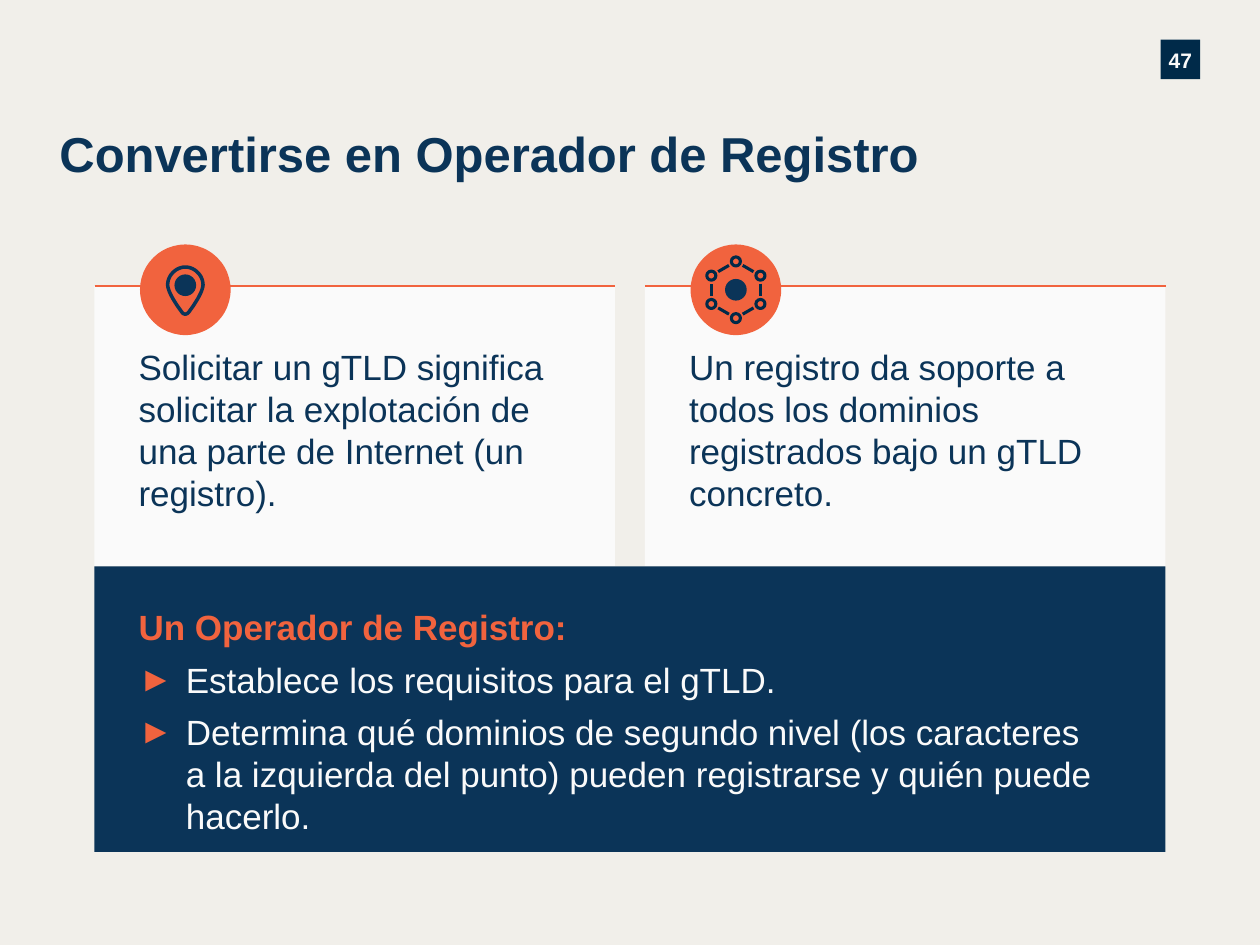
"""Build the slide on becoming a registry operator."""
import math
from dataclasses import dataclass

from lxml import etree
from pptx import Presentation
from pptx.dml.color import RGBColor
from pptx.enum.shapes import MSO_CONNECTOR, MSO_SHAPE
from pptx.enum.text import MSO_ANCHOR, PP_ALIGN
from pptx.oxml.ns import qn
from pptx.util import Pt

RECTANGLE, OVAL = MSO_SHAPE.RECTANGLE, MSO_SHAPE.OVAL
STRAIGHT = MSO_CONNECTOR.STRAIGHT
TOP, MIDDLE = MSO_ANCHOR.TOP, MSO_ANCHOR.MIDDLE
LEFT, CENTER = PP_ALIGN.LEFT, PP_ALIGN.CENTER

FONT = "Arial"
SAND, WHITE, ORANGE = "F1EFEA", "FAFAFA", "F1633E"
NAVY, DARK_NAVY = "0B3458", "002A49"

MARGIN, CONTENT_WIDTH = 54, 612
CARD_TOP, CARD_WIDTH, CARD_HEIGHT = 163.4, 297.4, 160
CARD_INSETS = (25.2, 33.8, 28.1, 21.6)
PANEL_INSETS = (25.2, 22.3, 33.8, 21.6)
BADGE_SIZE, BADGE_X, BADGE_Y = 51.8, 51.9, 165.6
DOT_SIZE = 12.4
BULLET_INDENT = 27

PIN_START = (1.8, 13)
PIN_CURVES = (
    ((0.7, 14.2), (-0.9, 14.2), (-1.8, 13)),
    ((-4.5, 9.4), (-10.1, 1.4), (-10.1, -2.9)),
    ((-10.1, -8.2), (-5.3, -13), (0, -13)),
    ((5.3, -13), (10.1, -8.2), (10.1, -2.9)),
    ((10.1, 1.4), (4.5, 9.4), PIN_START),
)
CURVE_STEPS = 12


@dataclass(frozen=True)
class Box:
    """A rectangle in points."""
    left: float
    top: float
    width: float
    height: float

    def lengths(self) -> tuple:
        """Return the four lengths for python-pptx."""
        return Pt(self.left), Pt(self.top), Pt(self.width), Pt(self.height)


@dataclass(frozen=True)
class Line:
    """One paragraph and its look."""
    text: str
    size: float = 20
    color: str = NAVY
    bold: bool = False
    bullet: bool = False
    align: PP_ALIGN = LEFT


def rgb(color: str) -> RGBColor:
    """Turn a hex string into a colour."""
    return RGBColor.from_string(color)


def add_bullet(para) -> None:
    """Give a paragraph a hanging orange arrow."""
    para.space_before = Pt(6)
    properties = para._p.get_or_add_pPr()
    properties.set("marL", str(Pt(BULLET_INDENT)))
    properties.set("indent", str(-Pt(BULLET_INDENT)))
    bullet_color = etree.SubElement(properties, qn("a:buClr"))
    etree.SubElement(bullet_color, qn("a:srgbClr"), val=ORANGE)
    etree.SubElement(properties, qn("a:buFont"), typeface=FONT)
    etree.SubElement(properties, qn("a:buChar"), char="►")


def write(shape, lines: list[Line], insets: tuple = (0, 0, 0, 0), anchor: MSO_ANCHOR = TOP) -> None:
    """Fill a shape with formatted paragraphs."""
    frame = shape.text_frame
    frame.word_wrap = True
    frame.vertical_anchor = anchor
    frame.margin_left, frame.margin_top, frame.margin_right, frame.margin_bottom = map(Pt, insets)
    frame.text = "\n".join(line.text for line in lines)
    for para, line in zip(frame.paragraphs, lines):
        para.alignment = line.align
        if line.bullet:
            add_bullet(para)
        for span in para.runs:
            span.font.name = FONT
            span.font.size = Pt(line.size)
            span.font.bold = line.bold
            span.font.color.rgb = rgb(line.color)


def paint(shape, fill: str | None, outline: str | None = None, weight: float = 0) -> None:
    """Set the fill and outline of a shape and drop its shadow."""
    shape.shadow.inherit = False
    if fill:
        shape.fill.solid()
        shape.fill.fore_color.rgb = rgb(fill)
    else:
        shape.fill.background()
    if outline:
        shape.line.color.rgb = rgb(outline)
        shape.line.width = Pt(weight)
    else:
        shape.line.fill.background()


def add_panel(shapes, box: Box, fill: str):
    """Add a filled rectangle without outline."""
    panel = shapes.add_shape(RECTANGLE, *box.lengths())
    paint(panel, fill)
    return panel


def add_circle(shapes, x: float, y: float, size: float, fill: str | None,
               outline: str | None = None, weight: float = 0) -> None:
    """Add a circle around a centre point."""
    box = Box(x - size / 2, y - size / 2, size, size)
    paint(shapes.add_shape(OVAL, *box.lengths()), fill, outline, weight)


def add_line(shapes, start: tuple, end: tuple, color: str, weight: float) -> None:
    """Add a straight line between two points."""
    line = shapes.add_connector(STRAIGHT, *map(Pt, (*start, *end)))
    line.line.color.rgb = rgb(color)
    line.line.width = Pt(weight)
    etree.SubElement(line._element.spPr, qn("a:effectLst"))


def bezier(p0: tuple, p1: tuple, p2: tuple, p3: tuple, t: float) -> tuple:
    """Return the point at t on a cubic curve."""
    u = 1 - t
    return tuple(u**3 * a + 3 * u * u * t * b + 3 * u * t * t * c + t**3 * d
                 for a, b, c, d in zip(p0, p1, p2, p3))


def draw_pin(shapes, x: float, y: float) -> None:
    """Draw a map pin around a centre point."""
    points = [PIN_START]
    for curve in PIN_CURVES:
        start = points[-1]
        points += [bezier(start, *curve, step / CURVE_STEPS) for step in range(1, CURVE_STEPS + 1)]
    first, *others = [(Pt(x + dx), Pt(y + dy)) for dx, dy in points]
    builder = shapes.build_freeform(*first)
    builder.add_line_segments(others, close=True)
    add_circle(shapes, x, y - 2.6, DOT_SIZE, NAVY)
    paint(builder.convert_to_shape(), None, NAVY, 2)


def draw_network(shapes, x: float, y: float) -> None:
    """Draw a ring of six linked nodes around a hub."""
    angles = [math.radians(60 * index - 90) for index in range(6)]
    nodes = [(x + 16.2 * math.cos(angle), y + 16.2 * math.sin(angle)) for angle in angles]
    for (ax, ay), (bx, by) in zip(nodes, nodes[1:] + nodes[:1]):
        start, end = [(ax + (bx - ax) * t, ay + (by - ay) * t) for t in (0.28, 0.72)]
        add_line(shapes, start, end, DARK_NAVY, 1.75)
        add_circle(shapes, ax, ay, 5.2, None, DARK_NAVY, 1.75)
    add_circle(shapes, x, y, DOT_SIZE, NAVY)


def main() -> None:
    """Build and save the deck."""
    deck = Presentation()
    deck.slide_width, deck.slide_height = Pt(720), Pt(540)
    page = deck.slides.add_slide(deck.slide_layouts[6])
    page.background.fill.solid()
    page.background.fill.fore_color.rgb = rgb(SAND)
    shapes = page.shapes

    number = add_panel(shapes, Box(663.2, 22.6, 22.6, 22.6), DARK_NAVY)
    write(number, [Line("47", 12, WHITE, True, align=CENTER)], anchor=MIDDLE)
    number.text_frame.paragraphs[0].line_spacing = 1.08
    title = shapes.add_textbox(*Box(34, 70.6, 549.4, 37.4).lengths())
    write(title, [Line("Convertirse en Operador de Registro", 28, bold=True)])

    cards = (
        (MARGIN, draw_pin,
         "Solicitar un gTLD significa solicitar la explotación de una parte de Internet (un registro)."),
        (MARGIN + CONTENT_WIDTH - CARD_WIDTH, draw_network,
         "Un registro da soporte a todos los dominios registrados bajo un gTLD concreto."),
    )
    for left, draw_icon, text in cards:
        card = add_panel(shapes, Box(left, CARD_TOP, CARD_WIDTH, CARD_HEIGHT), WHITE)
        write(card, [Line(text)], CARD_INSETS)
        add_line(shapes, (left, CARD_TOP), (left + CARD_WIDTH, CARD_TOP), ORANGE, 1.25)
        badge = shapes.add_group_shape().shapes
        add_circle(badge, left + BADGE_X, BADGE_Y, BADGE_SIZE, ORANGE)
        draw_icon(badge, left + BADGE_X, BADGE_Y)

    panel = add_panel(shapes, Box(MARGIN, 323.7, CONTENT_WIDTH, 163.2), NAVY)
    write(panel, [
        Line("Un Operador de Registro:", color=ORANGE, bold=True),
        Line("Establece los requisitos para el gTLD.", color=WHITE, bullet=True),
        Line("Determina qué dominios de segundo nivel (los caracteres a la izquierda del punto) "
             "pueden registrarse y quién puede hacerlo.", color=WHITE, bullet=True),
    ], PANEL_INSETS)
    deck.save("out.pptx")


if __name__ == "__main__":
    main()
